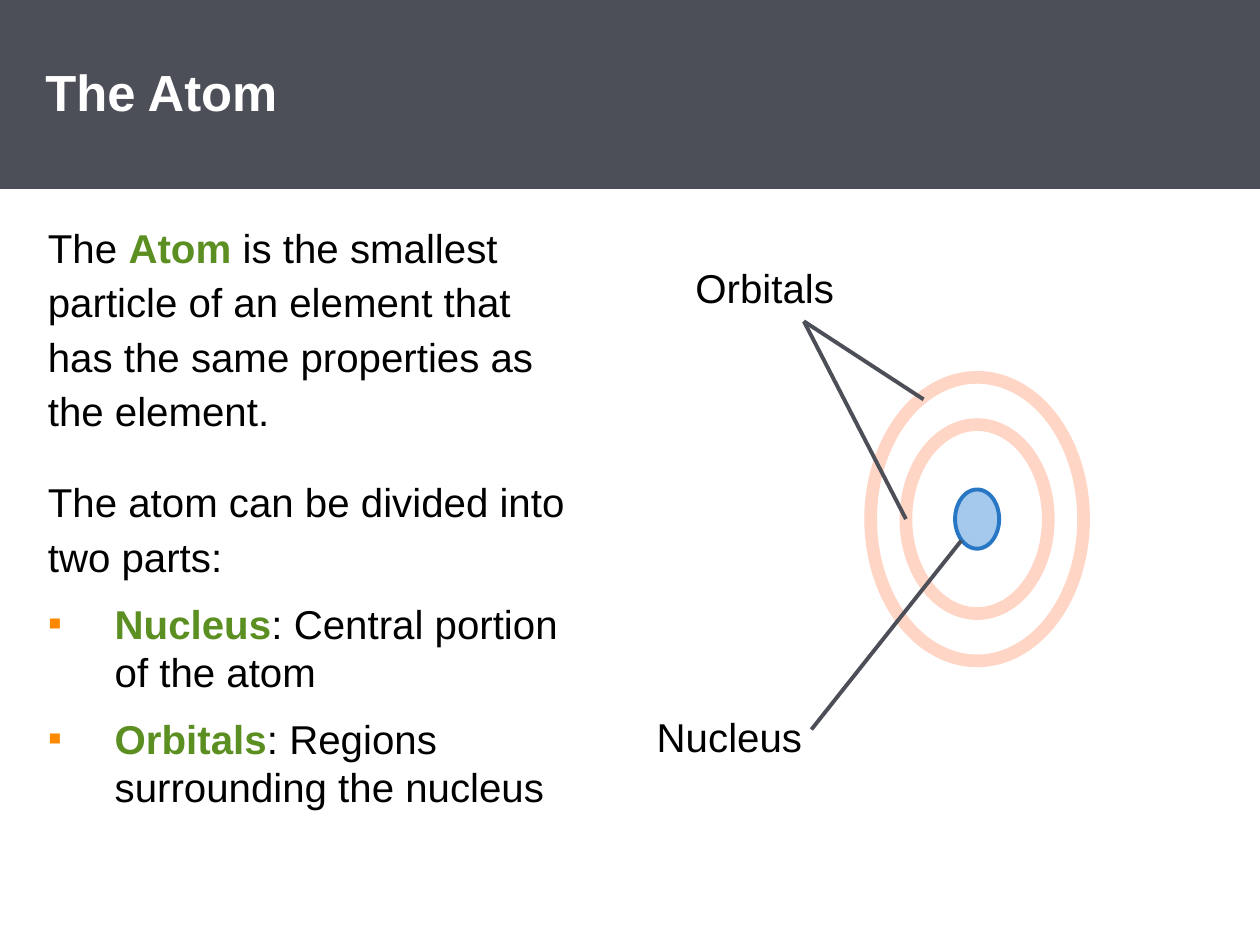
from dataclasses import dataclass
from typing import Optional

from lxml import etree
from pptx import Presentation
from pptx.dml.color import RGBColor
from pptx.enum.shapes import MSO_CONNECTOR, MSO_SHAPE
from pptx.enum.text import MSO_ANCHOR, MSO_AUTO_SIZE, PP_ALIGN
from pptx.oxml.ns import qn
from pptx.util import Inches, Pt

OVAL = MSO_SHAPE.OVAL
STRAIGHT = MSO_CONNECTOR.STRAIGHT
LEFT, CENTER = PP_ALIGN.LEFT, PP_ALIGN.CENTER
MIDDLE, TOP = MSO_ANCHOR.MIDDLE, MSO_ANCHOR.TOP
TITLE_ONLY = 5


@dataclass(frozen=True)
class Theme:
    font: str = "Arial"
    title_size: float = 29
    text_size: float = 23
    white: str = "FFFFFF"
    text: str = "000000"
    slate: str = "4D4F58"
    term: str = "5B8F22"
    bullet: str = "FE8900"
    orbital: str = "FFD5C5"
    nucleus: str = "A4C9EC"
    nucleus_edge: str = "2877C4"
    orbital_width: float = 7.25
    thin_width: float = 2.25


THEME = Theme()


@dataclass(frozen=True)
class Statement:
    before: str
    term: str
    after: str
    bulleted: bool = False


@dataclass(frozen=True)
class Ring:
    width: float
    height: float
    edge: str
    edge_width: float
    fill: Optional[str] = None


@dataclass(frozen=True)
class Label:
    text: str
    left: float
    top: float


@dataclass(frozen=True)
class Pointer:
    start: tuple[float, float]
    end: tuple[float, float]


STATEMENTS = [
    Statement("The ", "Atom", " is the smallest particle of an element that "
              "has the same properties as the element."),
    Statement("The atom can be divided into two parts:", "", ""),
    Statement("", "Nucleus", ": Central portion of the atom", bulleted=True),
    Statement("", "Orbitals", ": Regions surrounding the nucleus", bulleted=True),
]

ATOM_CENTER = (7.755, 4.12)
RINGS = [
    Ring(1.13, 1.5, THEME.orbital, THEME.orbital_width),
    Ring(0.35, 0.47, THEME.nucleus_edge, THEME.thin_width, THEME.nucleus),
    Ring(1.69, 2.25, THEME.orbital, THEME.orbital_width),
]

LABELS = [Label("Nucleus", 4.67, 5.55), Label("Orbitals", 4.95, 1.99)]

ORBITALS_ANCHOR = (6.38, 2.55)
POINTERS = [
    Pointer(ORBITALS_ANCHOR, (7.33, 3.17)),
    Pointer(ORBITALS_ANCHOR, (7.19, 4.12)),
    Pointer((6.44, 5.79), (7.63, 4.29)),
]


def rgb(color: str) -> RGBColor:
    return RGBColor.from_string(color)


def write(paragraph, text: str, *, size: float = THEME.text_size,
          color: str = THEME.text, bold: bool = False, align=LEFT) -> None:
    paragraph.alignment = align
    run = paragraph.add_run()
    run.text = text
    run.font.name = THEME.font
    run.font.size = Pt(size)
    run.font.bold = bold
    run.font.color.rgb = rgb(color)


def set_frame(frame, side: float, edge: float, *, right: Optional[float] = None,
              anchor=TOP) -> None:
    """Set wrapping and insets; the right inset equals the left unless given."""
    frame.word_wrap = True
    frame.auto_size = MSO_AUTO_SIZE.NONE
    frame.vertical_anchor = anchor
    frame.margin_left = Inches(side)
    frame.margin_right = Inches(side if right is None else right)
    frame.margin_top = frame.margin_bottom = Inches(edge)


def add_bullet(paragraph) -> None:
    properties = paragraph._p.get_or_add_pPr()
    properties.set("marL", str(Inches(0.53)))
    properties.set("indent", str(-Inches(0.53)))
    color = etree.SubElement(properties, qn("a:buClr"))
    etree.SubElement(color, qn("a:srgbClr"), val=THEME.bullet)
    etree.SubElement(properties, qn("a:buFont"), typeface=THEME.font)
    etree.SubElement(properties, qn("a:buChar"), char="▪")


def add_title(slide, text: str) -> None:
    title = slide.shapes.title
    title.left = title.top = 0
    title.width, title.height = Inches(10), Inches(1.5)
    title.fill.solid()
    title.fill.fore_color.rgb = rgb(THEME.slate)
    set_frame(title.text_frame, 0.36, 0.15, anchor=MIDDLE)
    paragraph = title.text_frame.paragraphs[0]
    paragraph.line_spacing = 0.95
    write(paragraph, text, size=THEME.title_size, color=THEME.white, bold=True)


def add_statements(slide, statements: list[Statement]) -> None:
    box = slide.shapes.add_textbox(0, Inches(1.51), Inches(4.65), Inches(5.99))
    frame = box.text_frame
    set_frame(frame, 0.38, 0.21, right=0)
    for index, statement in enumerate(statements):
        paragraph = frame.add_paragraph() if index else frame.paragraphs[0]
        paragraph.space_before = Pt(10.5 if statement.bulleted else 21)
        paragraph.line_spacing = 1.0 if statement.bulleted else 1.13
        if statement.bulleted:
            add_bullet(paragraph)
        if statement.before:
            write(paragraph, statement.before)
        if statement.term:
            write(paragraph, statement.term, color=THEME.term, bold=True)
        if statement.after:
            write(paragraph, statement.after)


def add_ring(shapes, ring: Ring) -> None:
    """Draw an ellipse around the centre of the atom."""
    x, y = ATOM_CENTER
    oval = shapes.add_shape(OVAL, Inches(x - ring.width / 2), Inches(y - ring.height / 2),
                            Inches(ring.width), Inches(ring.height))
    oval.shadow.inherit = False
    oval.line.color.rgb = rgb(ring.edge)
    oval.line.width = Pt(ring.edge_width)
    if ring.fill:
        oval.fill.solid()
        oval.fill.fore_color.rgb = rgb(ring.fill)
    else:
        oval.fill.background()


def add_label(slide, label: Label) -> None:
    box = slide.shapes.add_textbox(Inches(label.left), Inches(label.top),
                                   Inches(2.24), Inches(0.6))
    set_frame(box.text_frame, 0.21, 0.1)
    write(box.text_frame.paragraphs[0], label.text, align=CENTER)


def add_pointer(slide, pointer: Pointer) -> None:
    ends = [Inches(value) for value in pointer.start + pointer.end]
    line = slide.shapes.add_connector(STRAIGHT, *ends)
    line.line.color.rgb = rgb(THEME.slate)
    line.line.width = Pt(THEME.thin_width)
    etree.SubElement(line._element.spPr, qn("a:effectLst"))


def main() -> None:
    deck = Presentation()
    deck.slide_width, deck.slide_height = Inches(10), Inches(7.5)
    slide = deck.slides.add_slide(deck.slide_layouts[TITLE_ONLY])
    add_title(slide, "The Atom")
    add_statements(slide, STATEMENTS)
    atom = slide.shapes.add_group_shape()
    for ring in RINGS:
        add_ring(atom.shapes, ring)
    for label in LABELS:
        add_label(slide, label)
    for pointer in POINTERS:
        add_pointer(slide, pointer)
    deck.save("out.pptx")


if __name__ == "__main__":
    main()
